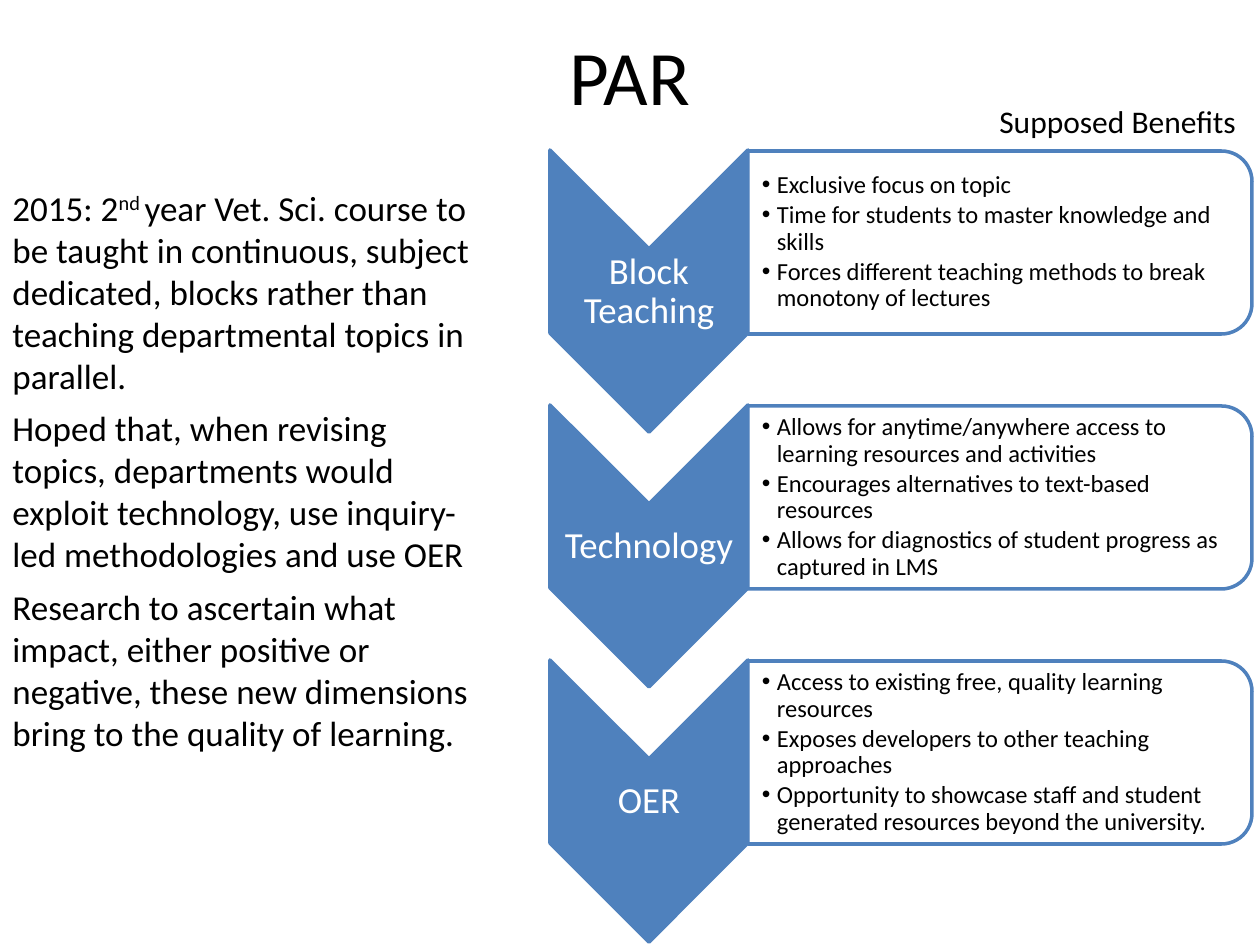
from dataclasses import dataclass

from lxml.etree import SubElement
from pptx import Presentation
from pptx.dml.color import RGBColor
from pptx.enum.shapes import MSO_SHAPE
from pptx.enum.text import MSO_ANCHOR, PP_ALIGN
from pptx.oxml.ns import qn
from pptx.util import Pt

PX = 9144000 // 1260  # the slide is 1260 px wide
FONT = "Calibri"
BLUE, WHITE, BLACK = "4F81BD", "FFFFFF", "000000"
ROW_TOP, ROW_PITCH = 150, 255


def px(length: float) -> int:
    return round(length * PX)


def color(value: str) -> RGBColor:
    return RGBColor.from_string(value)


@dataclass
class Box:
    left: int
    top: int
    width: int
    height: int

    def emu(self) -> tuple:
        return px(self.left), px(self.top), px(self.width), px(self.height)

    def before_turn(self) -> "Box":
        """The box that fills this one after a quarter turn."""
        shift = (self.width - self.height) / 2
        return Box(self.left + shift, self.top - shift, self.height, self.width)


@dataclass
class Stage:
    name: str
    benefits: list


STAGES = [
    Stage("Block Teaching", [
        "Exclusive focus on topic",
        "Time for students to master knowledge and skills",
        "Forces different teaching methods to break monotony of lectures",
    ]),
    Stage("Technology", [
        "Allows for anytime/anywhere access to learning resources and activities",
        "Encourages alternatives to text-based resources",
        "Allows for diagnostics of student progress as captured in LMS",
    ]),
    Stage("OER", [
        "Access to existing free, quality learning resources",
        "Exposes developers to other teaching approaches",
        "Opportunity to showcase staff and student generated resources beyond the university.",
    ]),
]

# Each paragraph is a list of (text, is superscript) runs
SUMMARY = [
    [("2015: 2", False), ("nd ", True),
     ("year Vet. Sci. course to be taught in continuous, subject dedicated, blocks "
      "rather than teaching departmental topics in parallel.", False)],
    [("Hoped that, when revising topics, departments would exploit technology, "
      "use inquiry-led methodologies and use OER", False)],
    [("Research to ascertain what impact, either positive or negative, these new "
      "dimensions bring to the quality of learning.", False)],
]


def set_all(target, values: dict) -> None:
    for name, value in values.items():
        setattr(target, name, value)


def add_run(paragraph, text: str, size: int, text_color: str = BLACK):
    run = paragraph.add_run()
    run.text = text
    set_all(run.font, {"size": Pt(size), "name": FONT})
    run.font.color.rgb = color(text_color)
    return run


def add_text_box(slide, box: Box, **frame_format):
    frame = slide.shapes.add_textbox(*box.emu()).text_frame
    set_all(frame, {"word_wrap": True, **frame_format})
    return frame


def paragraphs(frame, count: int) -> list:
    return [frame.paragraphs[0]] + [frame.add_paragraph() for _ in range(count - 1)]


def add_turned_shape(slide, kind: MSO_SHAPE, box: Box, fill: str):
    shape = slide.shapes.add_shape(kind, *box.before_turn().emu())
    shape.rotation = 90
    shape.shadow.inherit = False
    shape.fill.solid()
    shape.fill.fore_color.rgb = color(fill)
    shape.line.color.rgb = color(BLUE)
    shape.line.width = Pt(2)
    return shape


def add_bullet(paragraph) -> None:
    properties = paragraph._p.get_or_add_pPr()
    properties.set("marL", str(px(15)))
    properties.set("indent", str(px(-15)))
    SubElement(properties, qn("a:buFont"), typeface="Arial")
    SubElement(properties, qn("a:buChar"), char="•")


def add_stage(slide, stage: Stage, top: int) -> None:
    # Chevron and its label
    chevron = add_turned_shape(slide, MSO_SHAPE.CHEVRON, Box(550, top, 198, 282), BLUE)
    chevron.adjustments[0] = 0.5
    margins = {"margin_left": px(1), "margin_right": px(1),
               "margin_top": px(1), "margin_bottom": px(1),
               "vertical_anchor": MSO_ANCHOR.MIDDLE}
    label = add_text_box(slide, Box(550, top + 100, 198, 84), **margins).paragraphs[0]
    set_all(label, {"alignment": PP_ALIGN.CENTER, "line_spacing": 0.9, "space_after": Pt(7)})
    add_run(label, stage.name, 21, WHITE)

    # Panel and its bulleted benefits
    panel = add_turned_shape(slide, MSO_SHAPE.ROUND_2_SAME_RECTANGLE,
                             Box(748, top + 1, 504, 183), WHITE)
    fill_color = panel._element.spPr.find(qn("a:solidFill"))[0]
    SubElement(fill_color, qn("a:alpha"), val="90000")
    frame = add_text_box(slide, Box(748, top + 10, 495, 165), **{**margins, "margin_left": px(14)})
    for paragraph, benefit in zip(paragraphs(frame, len(stage.benefits)), stage.benefits):
        set_all(paragraph, {"line_spacing": 0.9, "space_after": Pt(2)})
        add_bullet(paragraph)
        add_run(paragraph, benefit, 14)


def add_title(slide, text: str) -> None:
    title = slide.shapes.title
    box = Box(63, -4, 1134, 158)
    set_all(title, dict(zip(("left", "top", "width", "height"), box.emu())))
    title.text_frame.vertical_anchor = MSO_ANCHOR.MIDDLE
    paragraph = title.text_frame.paragraphs[0]
    paragraph.alignment = PP_ALIGN.CENTER
    add_run(paragraph, text, 44)


def add_summary(slide) -> None:
    frame = add_text_box(slide, Box(0, 180, 488, 765))
    for index, paragraph in enumerate(paragraphs(frame, len(SUMMARY))):
        paragraph.space_before = Pt(6 if index else 4)
        for text, superscript in SUMMARY[index]:
            run = add_run(paragraph, text, 20)
            if superscript:
                run.font._element.set("baseline", "30000")


def main() -> None:
    presentation = Presentation()
    set_all(presentation, {"slide_width": px(1260), "slide_height": px(945)})
    slide = presentation.slides.add_slide(presentation.slide_layouts[5])

    add_title(slide, "PAR")
    add_summary(slide)
    for index, stage in enumerate(STAGES):
        add_stage(slide, stage, ROW_TOP + index * ROW_PITCH)

    # Heading over the panels
    heading = add_text_box(slide, Box(987, 96, 265, 50), word_wrap=False)
    add_run(heading.paragraphs[0], "Supposed Benefits", 18)

    presentation.save("out.pptx")


if __name__ == "__main__":
    main()
